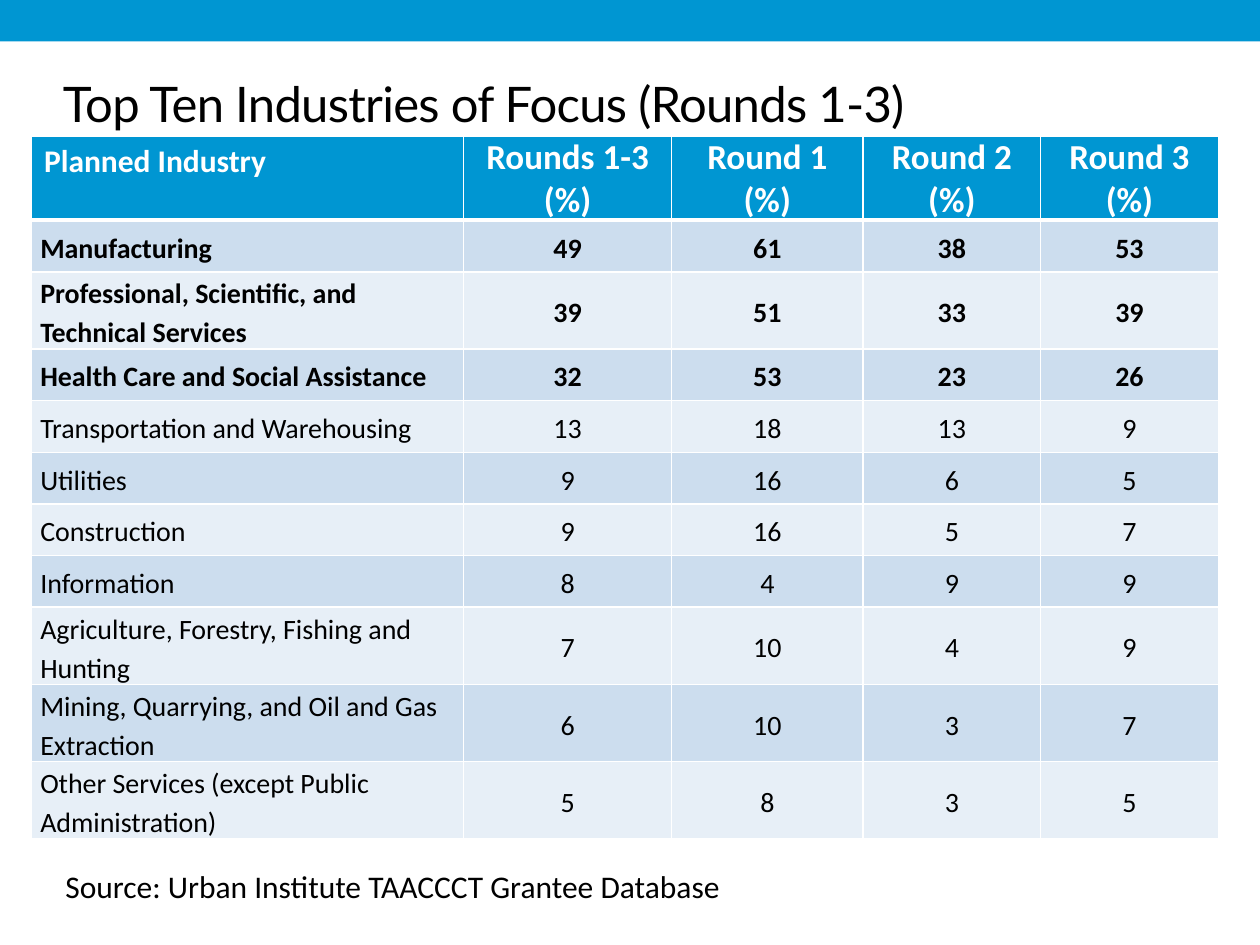
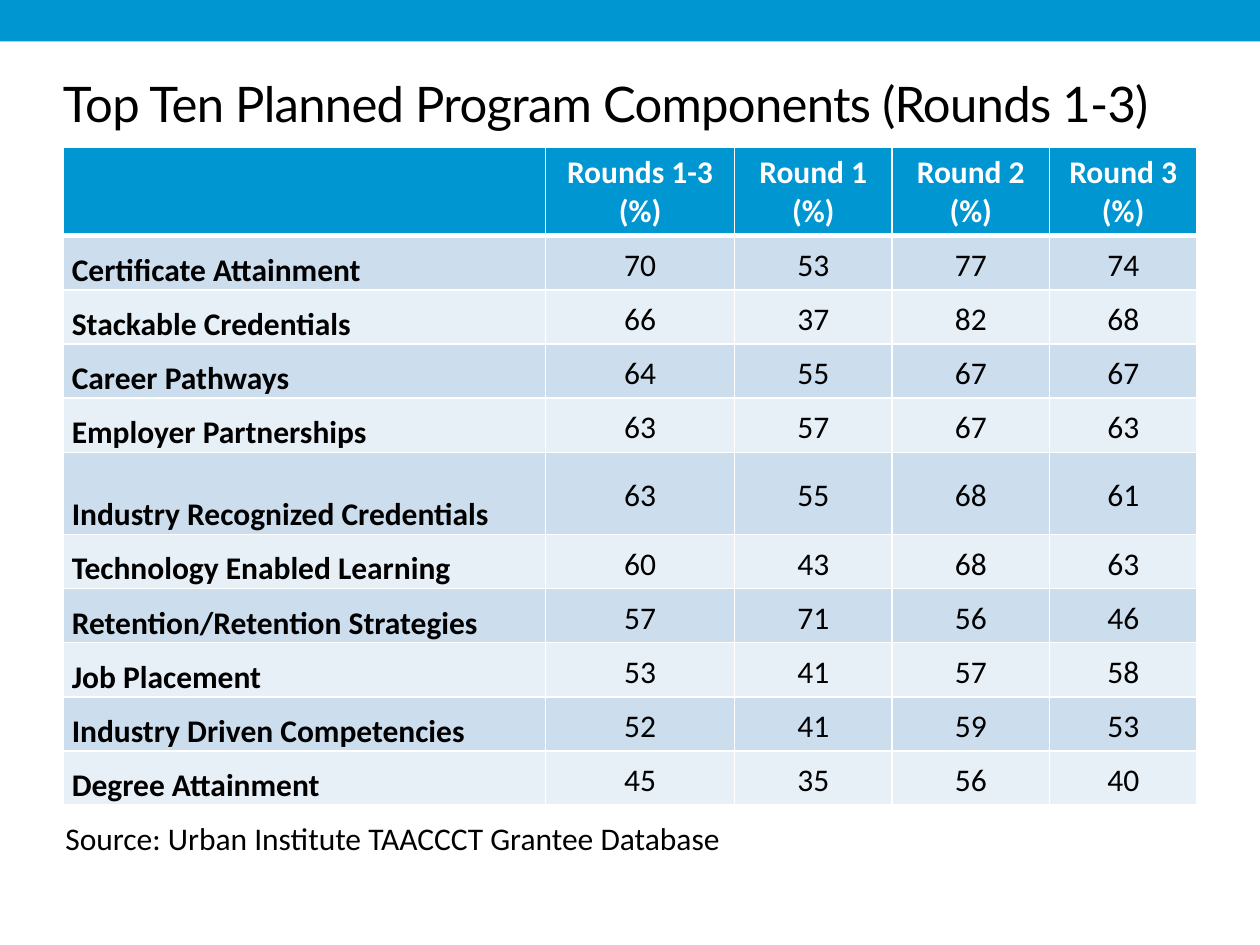
from dataclasses import dataclass

from lxml.etree import SubElement
from pptx import Presentation
from pptx.dml.color import RGBColor
from pptx.enum.shapes import MSO_SHAPE
from pptx.enum.text import MSO_ANCHOR, PP_ALIGN
from pptx.oxml.ns import qn
from pptx.util import Inches, Pt


@dataclass(frozen=True)
class Theme:
    blue: str = "0096D2"
    band_dark: str = "CCDDEE"
    band_light: str = "E7EFF7"
    white: str = "FFFFFF"
    black: str = "000000"
    title_font: str = "Lato"
    body_font: str = "Calibri"
    title_size: int = 28
    text_size: int = 18
    small_size: int = 16
    large_size: int = 20
    title_spacing: int = -40  # hundredths of a point
    line_spacing: float = 1.15
    rule: int = 1
    header_rule: int = 3


@dataclass(frozen=True)
class TableLook:
    """What differs between the tables."""
    body_size: int
    round_size: int
    tight_header: bool
    label_anchor: MSO_ANCHOR
    bold_label_rows: int
    bold_value_rows: int


THEME = Theme()
HEADER_ROUNDS = ["Rounds 1-3 (%)", "Round 1 (%)", "Round 2 (%)", "Round 3 (%)"]
SOURCE = "Source: Urban Institute TAACCCT Grantee Database"

INDUSTRIES = [
    ("Manufacturing", 49, 61, 38, 53),
    ("Professional, Scientific, and Technical Services", 39, 51, 33, 39),
    ("Health Care and Social Assistance", 32, 53, 23, 26),
    ("Transportation and Warehousing", 13, 18, 13, 9),
    ("Utilities", 9, 16, 6, 5),
    ("Construction", 9, 16, 5, 7),
    ("Information", 8, 4, 9, 9),
    ("Agriculture, Forestry, Fishing and Hunting", 7, 10, 4, 9),
    ("Mining, Quarrying, and Oil and Gas Extraction", 6, 10, 3, 7),
    ("Other Services (except Public Administration)", 5, 8, 3, 5),
]

COMPONENTS = [
    ("Certificate Attainment", 70, 53, 77, 74),
    ("Stackable Credentials", 66, 37, 82, 68),
    ("Career Pathways", 64, 55, 67, 67),
    ("Employer Partnerships", 63, 57, 67, 63),
    ("Industry Recognized Credentials", 63, 55, 68, 61),
    ("Technology Enabled Learning", 60, 43, 68, 63),
    ("Retention/Retention Strategies", 57, 71, 56, 46),
    ("Job Placement", 53, 41, 57, 58),
    ("Industry Driven Competencies", 52, 41, 59, 53),
    ("Degree Attainment", 45, 35, 56, 40),
]


class Deck:
    def __init__(self, theme):
        self.theme = theme
        self.prs = Presentation()
        self.prs.slide_width, self.prs.slide_height = Inches(10), Inches(7.5)
        self.s = None

    def slide(self, title):
        """Start a slide with the top band and its title."""
        t = self.theme
        self.s = self.prs.slides.add_slide(self.prs.slide_layouts[6])
        band = self.s.shapes.add_shape(MSO_SHAPE.RECTANGLE, 0, 0, Inches(10), Inches(0.33))
        band.shadow.inherit = False
        band.fill.solid()
        band.fill.fore_color.rgb = RGBColor.from_string(t.blue)
        band.line.fill.background()

        tf = self.text(title, 0.5, 0.58, 9, 0.62, t.title_size, t.title_font)
        tf.margin_left = tf.margin_right = tf.margin_top = tf.margin_bottom = 0
        tf.paragraphs[0].runs[0].font._element.set("spc", str(t.title_spacing))

    def text(self, text, x, y, w, h, size, font):
        sp = self.s.shapes.add_textbox(Inches(x), Inches(y), Inches(w), Inches(h))
        tf = sp.text_frame
        tf.word_wrap = True
        tf.text = text
        self.style(tf.paragraphs[0], size, self.theme.black, font=font)
        return tf

    def source(self, y):
        self.text(SOURCE, 0.42, y, 5.92, 0.4, self.theme.text_size, self.theme.body_font)

    def style(self, p, size, color, bold=False, font=None):
        for r in p.runs:
            r.font.size = Pt(size)
            r.font.bold = bold
            r.font.name = font or self.theme.body_font
            r.font.color.rgb = RGBColor.from_string(color)

    def borders(self, cell, top, bottom):
        rule = self.theme.rule
        tc_pr = cell._tc.get_or_add_tcPr()
        for side, width in (("L", rule), ("R", rule), ("T", top), ("B", bottom)):
            ln = SubElement(tc_pr, qn(f"a:ln{side}"), w=str(Pt(width)))
            fill = SubElement(ln, qn("a:solidFill"))
            SubElement(fill, qn("a:srgbClr"), val=self.theme.white)

    def cell(self, cell, text, row, col, look):
        t = self.theme
        header, label = row == 0, col == 0
        self.borders(cell, t.header_rule if row == 1 else t.rule,
                     t.header_rule if header else t.rule)
        cell.fill.solid()
        cell.fill.fore_color.rgb = RGBColor.from_string(
            t.blue if header else t.band_dark if row % 2 else t.band_light)
        cell.text = str(text)
        p = cell.text_frame.paragraphs[0]
        p.alignment = PP_ALIGN.LEFT if label else PP_ALIGN.CENTER

        if not header or (look.tight_header and not label):
            cell.margin_left = cell.margin_right = Inches(0.07)
            cell.margin_top = cell.margin_bottom = 0
        if header:
            bottom = look.tight_header and not label
            cell.vertical_anchor = MSO_ANCHOR.BOTTOM if bottom else MSO_ANCHOR.TOP
            self.style(p, t.text_size if label else look.round_size, t.white, True)
        else:
            cell.vertical_anchor = look.label_anchor if label else MSO_ANCHOR.MIDDLE
            p.line_spacing = t.line_spacing
            bold_rows = look.bold_label_rows if label else look.bold_value_rows
            self.style(p, look.body_size, t.black, row <= bold_rows)

    def table(self, x, y, col_widths, row_heights, heading, records, look):
        rows = [(heading, *HEADER_ROUNDS), *records]
        frame = self.s.shapes.add_table(
            len(rows), len(col_widths), Inches(x), Inches(y),
            Inches(sum(col_widths)), Inches(sum(row_heights)))
        table = frame.table
        table.horz_banding = False
        for column, width in zip(table.columns, col_widths):
            column.width = Inches(width)
        for row, height in zip(table.rows, row_heights):
            row.height = Inches(height)
        for i, values in enumerate(rows):
            for j, value in enumerate(values):
                self.cell(table.cell(i, j), value, i, j, look)


def main():
    deck = Deck(THEME)

    # Industries of focus: the three leading rows are bold
    deck.slide("Top Ten Industries of Focus (Rounds 1-3)")
    deck.table(0.25, 1.08, [3.43, 1.65, 1.52, 1.41, 1.41], [0.41] * 10 + [0.59],
               "Planned Industry", INDUSTRIES,
               TableLook(THEME.small_size, THEME.large_size, True, MSO_ANCHOR.MIDDLE, 3, 3))
    deck.source(6.83)

    # Program components: every label is bold
    deck.slide("Top Ten Planned Program Components (Rounds 1-3)")
    deck.table(0.5, 1.17, [3.83, 1.5, 1.25, 1.25, 1.17],
               [0.43] * 5 + [0.65] + [0.43] * 5, "", COMPONENTS,
               TableLook(THEME.text_size, THEME.text_size, False, MSO_ANCHOR.BOTTOM,
                         len(COMPONENTS), 0))
    deck.source(6.45)

    deck.prs.save("out.pptx")


if __name__ == "__main__":
    main()
